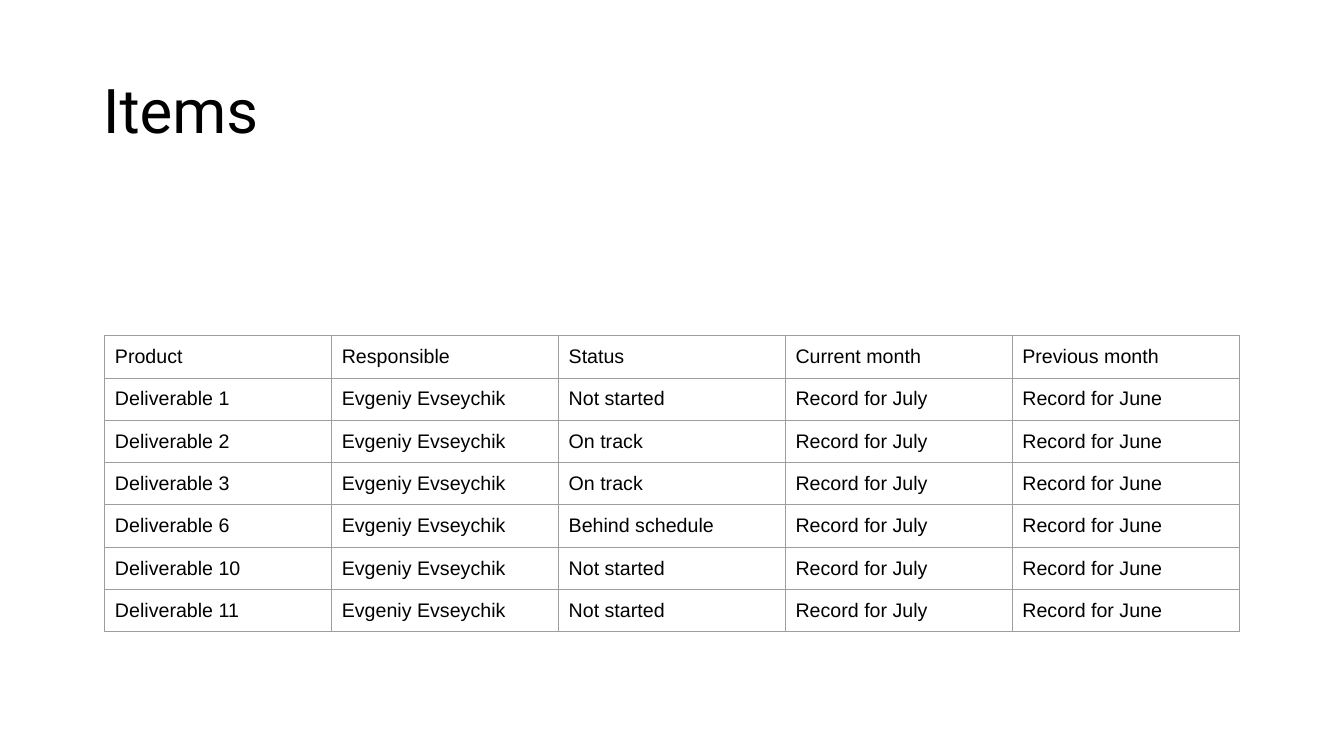
from dataclasses import astuple, dataclass

from lxml import etree
from pptx import Presentation
from pptx.dml.color import RGBColor
from pptx.enum.text import MSO_ANCHOR, MSO_AUTO_SIZE, PP_ALIGN
from pptx.oxml.ns import qn
from pptx.slide import Slide
from pptx.table import _Cell
from pptx.text.text import _Paragraph
from pptx.util import Inches, Pt

LEFT = PP_ALIGN.LEFT
TOP, MIDDLE = MSO_ANCHOR.TOP, MSO_ANCHOR.MIDDLE
NO_AUTOFIT = MSO_AUTO_SIZE.NONE
TITLE_ONLY_LAYOUT = 5


@dataclass(frozen=True)
class Theme:
    background: str = "FFFFFF"
    text: str = "000000"
    border: str = "9E9E9E"
    title_font: str = "Roboto"
    body_font: str = "Arial"
    title_size: float = 44
    body_size: float = 14
    border_width: float = 0.75


@dataclass(frozen=True)
class Grid:
    """Table grid in inches."""
    left: float = 1.04
    top: float = 3.33
    column: float = 2.25
    row: float = 0.42
    padding: float = 0.1


@dataclass(frozen=True)
class Item:
    product: str
    responsible: str
    status: str
    current_month: str
    previous_month: str


def deliverable(number: int, status: str) -> Item:
    return Item(f"Deliverable {number}", "Evgeniy Evseychik", status,
                "Record for July", "Record for June")


THEME = Theme()
GRID = Grid()
SLIDE_WIDTH, SLIDE_HEIGHT = Inches(13.33), Inches(7.5)
ITEMS = [
    Item("Product", "Responsible", "Status", "Current month", "Previous month"),
    deliverable(1, "Not started"),
    deliverable(2, "On track"),
    deliverable(3, "On track"),
    deliverable(6, "Behind schedule"),
    deliverable(10, "Not started"),
    deliverable(11, "Not started"),
]


def add_run(paragraph: _Paragraph, text: str, font: str, size: float) -> None:
    run = paragraph.add_run()
    run.text = text
    run.font.name = font
    run.font.size = Pt(size)
    run.font.color.rgb = RGBColor.from_string(THEME.text)


def add_title(slide: Slide, text: str) -> None:
    title = slide.shapes.title
    title.left, title.top = Inches(0.92), Inches(0.4)
    title.width, title.height = Inches(11.5), Inches(1.45)
    frame = title.text_frame
    frame.auto_size = NO_AUTOFIT
    frame.word_wrap = True
    frame.vertical_anchor = MIDDLE
    paragraph = frame.paragraphs[0]
    paragraph.alignment = LEFT
    paragraph.line_spacing = 0.9
    add_run(paragraph, text, THEME.title_font, THEME.title_size)


def set_borders(cell: _Cell) -> None:
    properties = cell._tc.get_or_add_tcPr()
    for index, side in enumerate(("a:lnL", "a:lnR", "a:lnT", "a:lnB")):
        line = etree.Element(qn(side), w=str(Pt(THEME.border_width)))
        fill = etree.SubElement(line, qn("a:solidFill"))
        etree.SubElement(fill, qn("a:srgbClr"), val=THEME.border)
        properties.insert(index, line)


def fill_cell(cell: _Cell, text: str) -> None:
    cell.fill.background()
    cell.vertical_anchor = TOP
    cell.margin_left = cell.margin_right = Inches(GRID.padding)
    cell.margin_top = cell.margin_bottom = Inches(GRID.padding)
    set_borders(cell)
    add_run(cell.text_frame.paragraphs[0], text, THEME.body_font, THEME.body_size)


def add_items_table(slide: Slide, items: list[Item]) -> None:
    rows = [astuple(item) for item in items]
    row_count, column_count = len(rows), len(rows[0])
    table = slide.shapes.add_table(
        row_count, column_count, Inches(GRID.left), Inches(GRID.top),
        Inches(GRID.column * column_count), Inches(GRID.row * row_count)).table
    table.first_row = False
    table.horz_banding = False
    for row_index, row in enumerate(rows):
        for column_index, text in enumerate(row):
            fill_cell(table.cell(row_index, column_index), text)


def main() -> None:
    presentation = Presentation()
    presentation.slide_width, presentation.slide_height = SLIDE_WIDTH, SLIDE_HEIGHT
    slide = presentation.slides.add_slide(presentation.slide_layouts[TITLE_ONLY_LAYOUT])
    background = slide.background.fill
    background.solid()
    background.fore_color.rgb = RGBColor.from_string(THEME.background)
    add_title(slide, "Items")
    add_items_table(slide, ITEMS)
    presentation.save("out.pptx")


if __name__ == "__main__":
    main()
